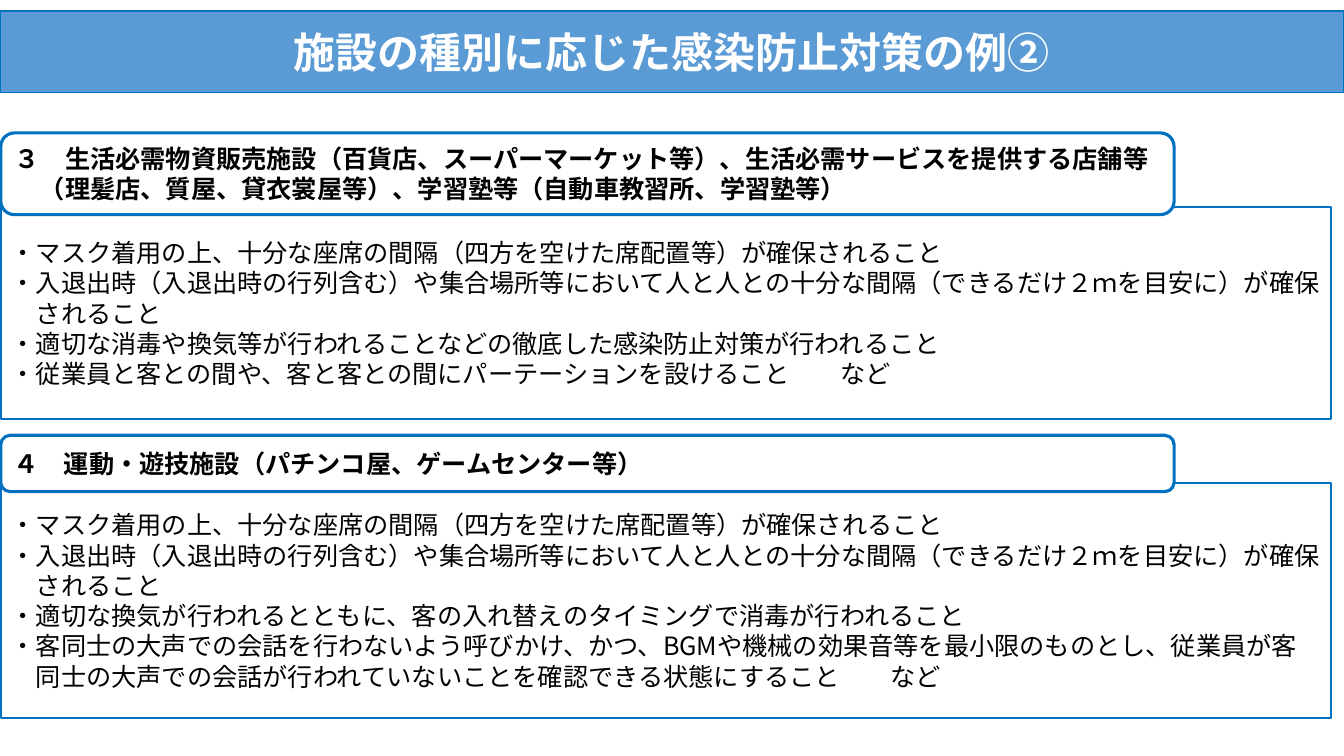
"""Build the slide on infection control measures by facility type."""
from dataclasses import dataclass

from lxml import etree
from pptx import Presentation
from pptx.dml.color import RGBColor
from pptx.enum.lang import MSO_LANGUAGE_ID
from pptx.enum.shapes import MSO_SHAPE
from pptx.enum.text import MSO_ANCHOR, PP_ALIGN
from pptx.oxml.ns import qn
from pptx.slide import Slide
from pptx.util import Cm, Pt

RECT = MSO_SHAPE.RECTANGLE
ROUNDED = MSO_SHAPE.ROUNDED_RECTANGLE
MIDDLE = MSO_ANCHOR.MIDDLE
LEFT = PP_ALIGN.LEFT
CENTER = PP_ALIGN.CENTER
JAPANESE = MSO_LANGUAGE_ID.JAPANESE

WHITE = RGBColor(0xFF, 0xFF, 0xFF)
BLACK = RGBColor(0x00, 0x00, 0x00)
SKY = RGBColor(0x5B, 0x9B, 0xD5)
BLUE = RGBColor(0x00, 0x70, 0xC0)

FONT = "Noto Sans CJK JP"
LINE_HEIGHT = 1.2
SLIDE_W, SLIDE_H = 33.87, 19.05
EDGE = 0.02
BODY_W = 33.53
HEADING_W = 29.57


@dataclass(frozen=True)
class Box:
    """A bordered box with lines of text, measured in centimetres."""
    left: float
    top: float
    width: float
    height: float
    lines: tuple[str, ...]
    shape: MSO_SHAPE = RECT
    fill: RGBColor = WHITE
    border: float = 1.5
    size: int = 18
    color: RGBColor = BLACK
    bold: bool = False
    align: PP_ALIGN = LEFT


@dataclass(frozen=True)
class Section:
    """A facility type with its heading and measures."""
    heading_top: float
    heading_h: float
    body_top: float
    body_h: float
    heading: tuple[str, ...]
    measures: tuple[str, ...]


COMMON_MEASURES = (
    "・マスク着用の上、十分な座席の間隔（四方を空けた席配置等）が確保されること",
    "・入退出時（入退出時の行列含む）や集合場所等において人と人との十分な間隔（できるだけ２ｍを目安に）が確保",
    "　されること",
)

TITLE = Box(0, 0.28, SLIDE_W, 2.06, ("施設の種別に応じた感染防止対策の例②",),
            fill=SKY, border=1, size=30, color=WHITE, bold=True, align=CENTER)

SECTIONS = (
    Section(
        3.35, 2.06, 5.21, 5.36,
        ("３　生活必需物資販売施設（百貨店、スーパーマーケット等）、生活必需サービスを提供する店舗等",
         "　（理髪店、質屋、貸衣裳屋等）、学習塾等（自動車教習所、学習塾等）"),
        COMMON_MEASURES + (
            "・適切な消毒や換気等が行われることなどの徹底した感染防止対策が行われること",
            "・従業員と客との間や、客と客との間にパーテーションを設けること　　など")),
    Section(
        10.97, 1.42, 12.17, 5.92,
        ("４　運動・遊技施設（パチンコ屋、ゲームセンター等）",),
        COMMON_MEASURES + (
            "・適切な換気が行われるとともに、客の入れ替えのタイミングで消毒が行われること",
            "・客同士の大声での会話を行わないよう呼びかけ、かつ、BGMや機械の効果音等を最小限のものとし、従業員が客",
            "　同士の大声での会話が行われていないことを確認できる状態にすること　　など")),
)


def add_box(s: Slide, box: Box) -> None:
    """Draw one box and its text."""
    sp = s.shapes.add_shape(box.shape, Cm(box.left), Cm(box.top), Cm(box.width), Cm(box.height))
    sp.shadow.inherit = False
    sp.fill.solid()
    sp.fill.fore_color.rgb = box.fill
    sp.line.color.rgb = BLUE
    sp.line.width = Pt(box.border)
    tf = sp.text_frame
    tf.word_wrap = True
    tf.vertical_anchor = MIDDLE
    for i, line in enumerate(box.lines):
        p = tf.add_paragraph() if i else tf.paragraphs[0]
        p.alignment = box.align
        p.line_spacing = Pt(box.size * LINE_HEIGHT)
        r = p.add_run()
        r.text = line
        r.font.name = FONT
        r.font.size = Pt(box.size)
        r.font.bold = box.bold
        r.font.color.rgb = box.color
        r.font.language_id = JAPANESE
        etree.SubElement(r.font._element, qn("a:ea"), typeface=FONT)


def add_section(s: Slide, section: Section) -> None:
    """Draw the measures with the heading overlapping their top edge."""
    add_box(s, Box(EDGE, section.body_top, BODY_W, section.body_h, section.measures))
    add_box(s, Box(EDGE, section.heading_top, HEADING_W, section.heading_h, section.heading,
                   shape=ROUNDED, border=2.25, bold=True))


def main() -> None:
    """Create and save the presentation."""
    prs = Presentation()
    prs.slide_width, prs.slide_height = Cm(SLIDE_W), Cm(SLIDE_H)
    s = prs.slides.add_slide(prs.slide_layouts[6])
    add_box(s, TITLE)
    for section in SECTIONS:
        add_section(s, section)
    prs.save("out.pptx")


if __name__ == "__main__":
    main()
